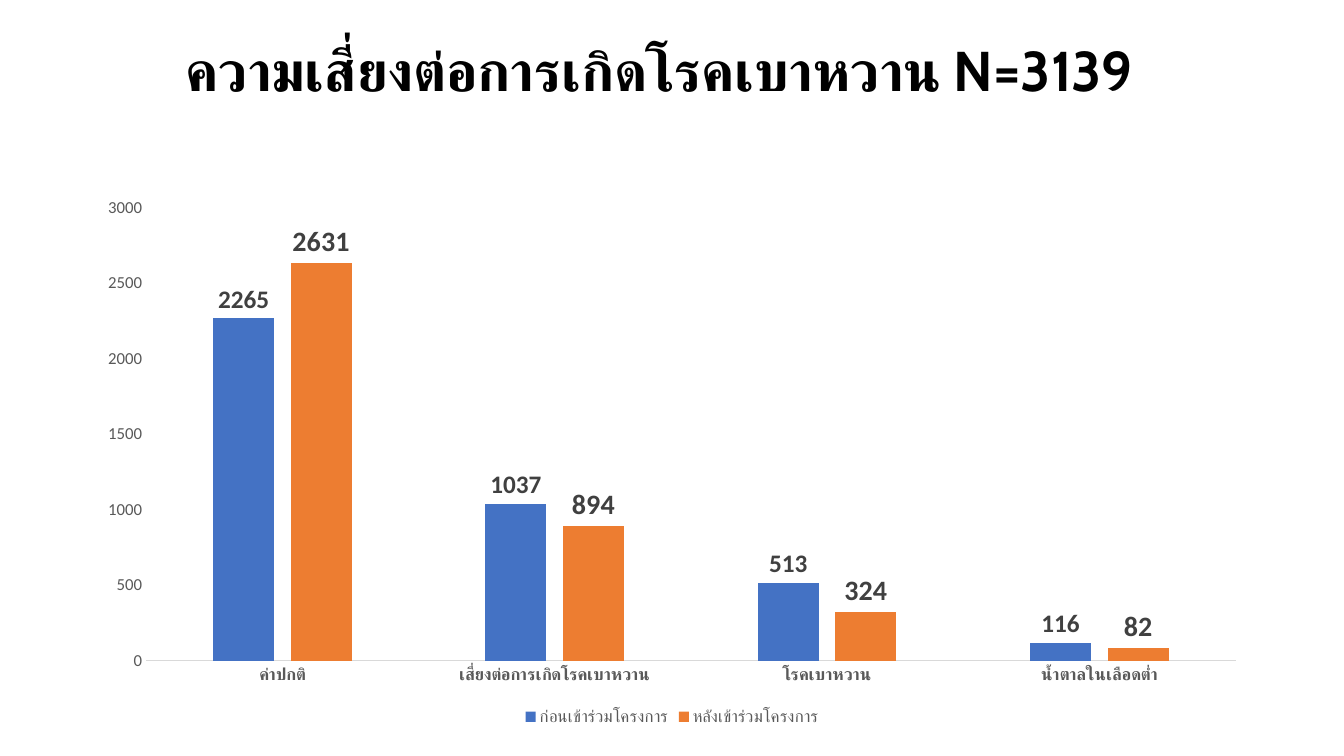
from dataclasses import dataclass

from lxml import etree
from pptx import Presentation
from pptx import util as u
from pptx.chart import data as chart_data
from pptx.dml.color import RGBColor
from pptx.enum import chart as charts, text
from pptx.oxml.ns import qn

BLACK = RGBColor(0x00, 0x00, 0x00)
AXIS_GREY = RGBColor(0x59, 0x59, 0x59)
LABEL_GREY = RGBColor(0x40, 0x40, 0x40)
LINE_GREY = RGBColor(0xD9, 0xD9, 0xD9)
BLUE = RGBColor(0x44, 0x72, 0xC4)
ORANGE = RGBColor(0xED, 0x7D, 0x31)

THAI_FONT = "Cabin"
NUMBER_FONT = "Calibri"
NUMBER_FORMAT = "###0"


@dataclass(frozen=True)
class Survey:
    name: str
    counts: tuple[int, ...]
    color: RGBColor
    label_size: int


CATEGORIES = ("ค่าปกติ", "เสี่ยงต่อการเกิดโรคเบาหวาน", "โรคเบาหวาน", "น้ำตาลในเลือดต่ำ")
SURVEYS = (
    Survey("ก่อนเข้าร่วมโครงการ", (2265, 1037, 513, 116), BLUE, 18),
    Survey("หลังเข้าร่วมโครงการ", (2631, 894, 324, 82), ORANGE, 20),
)


def style_font(font, name: str, size: float, color: RGBColor, bold: bool = False) -> None:
    font.name = name
    font.size = u.Pt(size)
    font.bold = bold
    font.color.rgb = color


def match_thai_fonts(element) -> None:
    """Give Thai script the same typeface as Latin script."""
    for latin in list(element.iter(qn("a:latin"))):
        thai = etree.Element(qn("a:cs"), typeface=latin.get("typeface"))
        latin.addnext(thai)


def add_title(page) -> None:
    box = page.shapes.title
    box.left, box.top = u.Pt(43.2), u.Pt(41.8)
    box.width, box.height = u.Pt(856), u.Pt(72)
    frame = box.text_frame
    frame.word_wrap = True
    frame.auto_size = text.MSO_AUTO_SIZE.NONE
    frame.vertical_anchor = text.MSO_ANCHOR.MIDDLE
    frame.margin_bottom = u.Pt(54)  # lifts the single line above the box centre
    para = frame.paragraphs[0]
    para.alignment = text.PP_ALIGN.CENTER
    para.line_spacing = 0.9
    span = para.add_run()
    span.text = "ความเสี่ยงต่อการเกิดโรคเบาหวาน N=3139"
    style_font(span.font, THAI_FONT, 40, BLACK, bold=True)
    match_thai_fonts(box.element)


def style_axes(chart) -> None:
    category_axis, value_axis = chart.category_axis, chart.value_axis
    for axis in (category_axis, value_axis):
        axis.has_major_gridlines = False
        axis.major_tick_mark = charts.XL_TICK_MARK.NONE
        axis.minor_tick_mark = charts.XL_TICK_MARK.NONE
    style_font(category_axis.tick_labels.font, THAI_FONT, 12, AXIS_GREY, bold=True)
    category_axis.format.line.color.rgb = LINE_GREY
    category_axis.format.line.width = u.Pt(0.75)

    style_font(value_axis.tick_labels.font, NUMBER_FONT, 12, AXIS_GREY)
    value_axis.tick_labels.number_format = NUMBER_FORMAT
    value_axis.tick_labels.number_format_is_linked = False
    value_axis.format.line.fill.background()
    value_axis.minimum_scale, value_axis.maximum_scale = 0, 3000
    value_axis.major_unit = 500


def style_series(series, survey: Survey) -> None:
    series.format.fill.solid()
    series.format.fill.fore_color.rgb = survey.color
    series.invert_if_negative = False
    labels = series.data_labels
    labels.show_value = True
    labels.position = charts.XL_LABEL_POSITION.OUTSIDE_END
    labels.number_format = NUMBER_FORMAT
    labels.number_format_is_linked = False
    style_font(labels.font, NUMBER_FONT, survey.label_size, LABEL_GREY, bold=True)


def add_risk_chart(page) -> None:
    table = chart_data.CategoryChartData(number_format=NUMBER_FORMAT)
    table.categories = CATEGORIES
    for survey in SURVEYS:
        table.add_series(survey.name, survey.counts)
    chart = page.shapes.add_chart(
        charts.XL_CHART_TYPE.COLUMN_CLUSTERED,
        u.Pt(60.5), u.Pt(133.2), u.Pt(838.8), u.Pt(388.8), table,
    ).chart
    chart.has_title = False
    style_font(chart.font, NUMBER_FONT, 10, BLACK)

    # Columns
    plot = chart.plots[0]
    plot.gap_width, plot.overlap = 219, -27
    plot.vary_by_categories = False
    for series, survey in zip(plot.series, SURVEYS):
        style_series(series, survey)

    # Axes and legend
    style_axes(chart)
    chart.has_legend = True
    chart.legend.position = charts.XL_LEGEND_POSITION.BOTTOM
    chart.legend.include_in_layout = False
    style_font(chart.legend.font, THAI_FONT, 12, AXIS_GREY)
    match_thai_fonts(chart.element)


def main() -> None:
    deck = Presentation()
    deck.slide_width, deck.slide_height = u.Pt(960), u.Pt(540)
    page = deck.slides.add_slide(deck.slide_layouts.get_by_name("Title Only"))
    add_title(page)
    add_risk_chart(page)
    deck.save("out.pptx")


if __name__ == "__main__":
    main()
